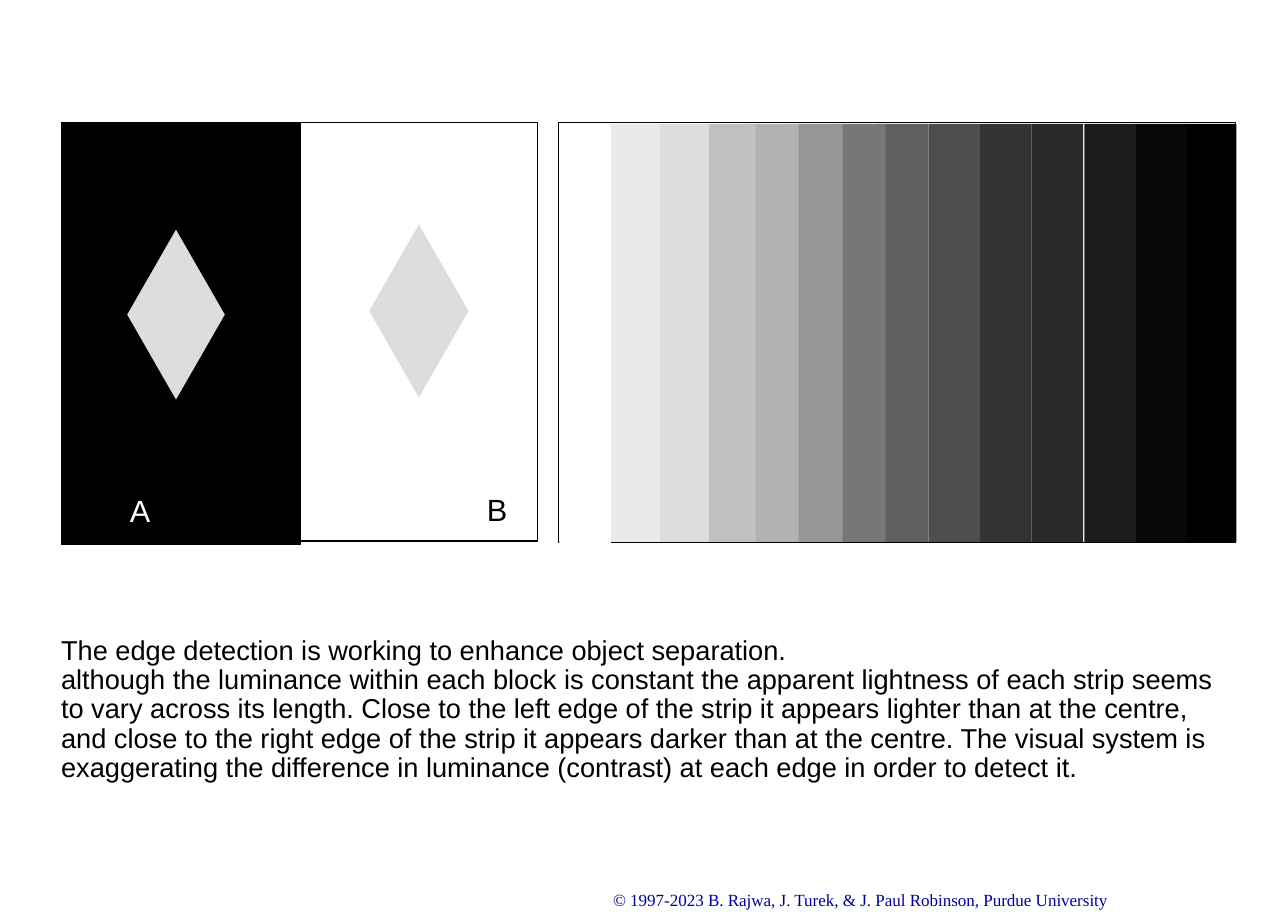
from dataclasses import dataclass
from typing import Optional

from pptx import Presentation
from pptx.dml.color import RGBColor
from pptx.enum.shapes import MSO_SHAPE as Shape
from pptx.util import Emu, Inches, Pt

# Grid: 105 columns by 75 rows on a 10.5 x 7.5 inch slide
COLS, ROWS = 105, 75
BLACK, WHITE, GREY = "000000", "FFFFFF", "DDDDDD"

prs = Presentation()
prs.slide_width, prs.slide_height = Inches(10.5), Inches(7.5)
s = prs.slides.add_slide(prs.slide_layouts[6])


@dataclass
class Box:
    col: float
    row: float
    cols: float
    rows: float

    def place(self) -> tuple[Emu, Emu, Emu, Emu]:
        cell_w, cell_h = prs.slide_width / COLS, prs.slide_height / ROWS
        return (Emu(round(self.col * cell_w)), Emu(round(self.row * cell_h)),
                Emu(round(self.cols * cell_w)), Emu(round(self.rows * cell_h)))


@dataclass
class Figure:
    box: Box
    fill: Optional[str] = None
    line: Optional[str] = None
    kind: Shape = Shape.RECTANGLE


@dataclass
class Label:
    box: Box
    lines: list[str]
    size: float
    color: str = BLACK
    font: str = "Arial"
    spacing: float = 1.0


def rgb(color: str) -> RGBColor:
    return RGBColor.from_string(color)


def draw_figure(fig: Figure) -> None:
    sp = s.shapes.add_shape(fig.kind, *fig.box.place())
    sp.shadow.inherit = False
    if fig.fill:
        sp.fill.solid()
        sp.fill.fore_color.rgb = rgb(fig.fill)
    else:
        sp.fill.background()
    if fig.line:
        sp.line.color.rgb = rgb(fig.line)
        sp.line.width = Pt(0.75)
    else:
        sp.line.fill.background()


def draw_label(label: Label) -> None:
    tf = s.shapes.add_textbox(*label.box.place()).text_frame
    tf.word_wrap = True
    tf.text = "\n".join(label.lines)
    for p in tf.paragraphs:
        p.line_spacing = label.spacing
        for r in p.runs:
            r.font.name = label.font
            r.font.size = Pt(label.size)
            r.font.color.rgb = rgb(label.color)


# Grey strips: left column and shade, light to dark
STRIP_COLS, STRIP_ROWS = 4.2, 34.1
STRIPS = [
    (49.6, "EAEAEA"), (53.6, GREY), (57.4, "C0C0C0"), (60.9, "B2B2B2"),
    (64.5, "969696"), (68, "777777"), (71.5, "5F5F5F"), (75.7, "4D4D4D"),
    (79.9, "333333"), (84.1, "292929"), (88.4, "1C1C1C"), (92.5, "080808"),
    (96.6, BLACK),
]

# Each lighter strip overlaps its darker neighbour
strips = [Figure(Box(col, 10.1, STRIP_COLS, STRIP_ROWS), shade)
          for col, shade in reversed(STRIPS)]

# Frame, contrast panels with their diamonds, and the white first strip
panels = [
    Figure(Box(45.5, 10, 55.2, 34.2), line=BLACK),
    Figure(Box(5, 10, 19.5, 34.4), BLACK, BLACK),
    Figure(Box(24.5, 10, 19.3, 34.1), WHITE, BLACK),
    Figure(Box(10.3, 18.6, 8.1, 14.1), GREY, BLACK, Shape.DIAMOND),
    Figure(Box(30.1, 18.3, 8.1, 14.1), GREY, kind=Shape.DIAMOND),
    Figure(Box(45.6, 10.2, STRIP_COLS, STRIP_ROWS), WHITE),
]

# Panel letters, explanation and copyright line
labels = [
    Label(Box(9.6, 39.6, 4.3, 4), ["A"], 18, WHITE),
    Label(Box(38.7, 39.5, 4.6, 4), ["B"], 18),
    Label(Box(4, 51.4, 98, 13.1), [
        "The edge detection is working to enhance object separation.",
        "although the luminance within each block is constant the apparent "
        "lightness of each strip seems to vary across its length. Close to the "
        "left edge of the strip it appears lighter than at the centre, and close "
        "to the right edge of the strip it appears darker than at the centre. "
        "The visual system is exaggerating the difference in luminance "
        "(contrast) at each edge in order to detect it.",
    ], 16, spacing=0.9),
    Label(Box(49, 72, 51.6, 2.7), [
        "© 1997-2023 B. Rajwa, J. Turek, & J. Paul Robinson, Purdue University",
    ], 10, "000099", "Times New Roman"),
]

for figure in strips + panels:
    draw_figure(figure)
for text in labels:
    draw_label(text)

prs.save("out.pptx")
